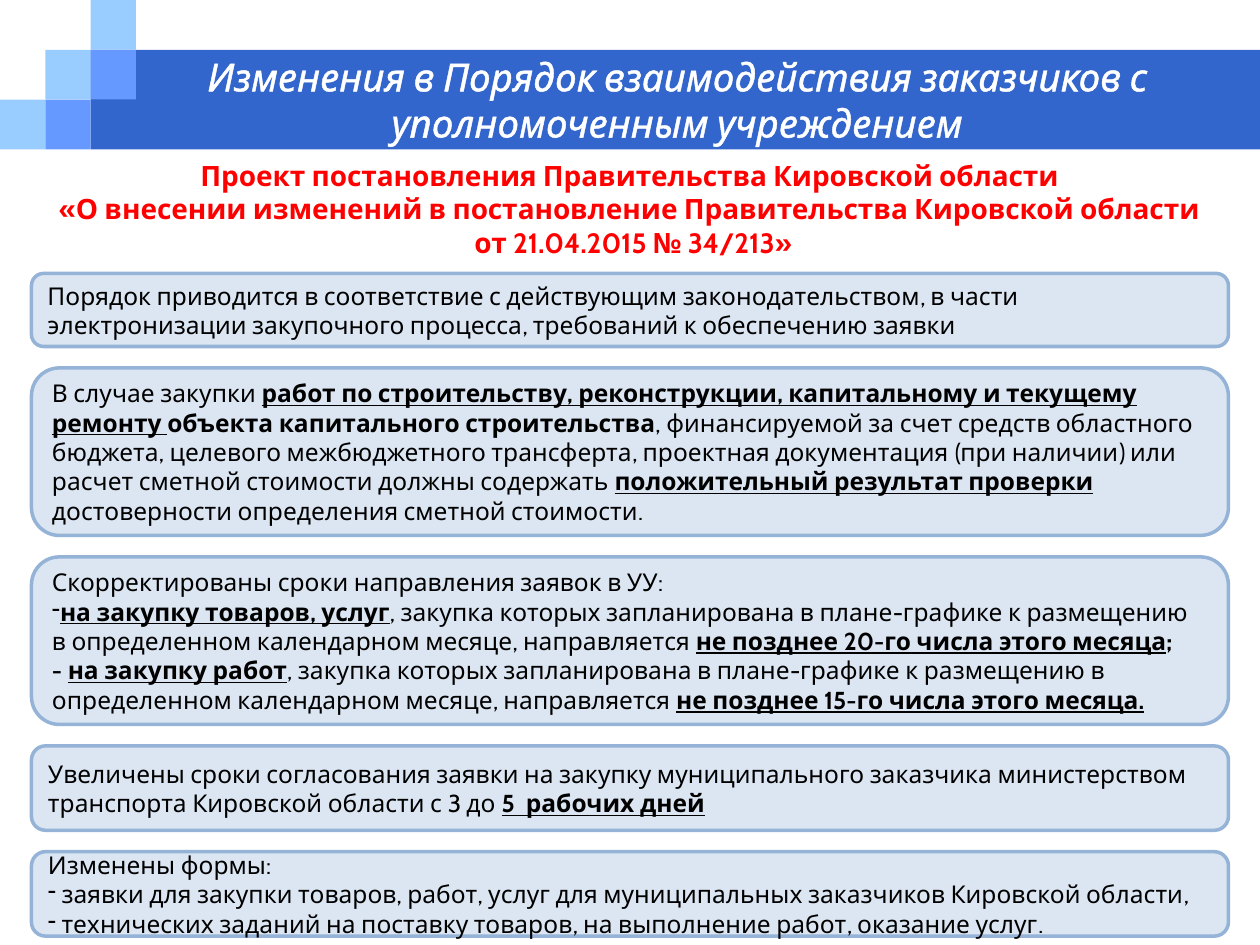
from typing import NamedTuple

from lxml import etree
from pptx import Presentation
from pptx import util as u
from pptx.dml import color
from pptx.enum import shapes, text
from pptx.oxml import ns

FONT = "Cabin"
CELL_W, CELL_H = 0.36, 0.395


class Run(NamedTuple):
    text: str
    bold: bool = False
    underline: bool = False


class Para(NamedTuple):
    runs: list[Run]
    dash: bool = False


class Panel(NamedTuple):
    height: float
    paras: list[Para]


class Block(NamedTuple):
    col: int
    row: int
    cols: float
    rows: int
    fill: str


def rgb(value: str) -> color.RGBColor:
    return color.RGBColor.from_string(value)


def key(value: str) -> Run:
    """Bold, underlined wording."""
    return Run(value, True, True)


def add_box(s, kind, left: float, top: float, width: float, height: float, fill: str):
    sp = s.shapes.add_shape(kind, *map(u.Inches, (left, top, width, height)))
    sp.shadow.inherit = False
    sp.fill.solid()
    sp.fill.fore_color.rgb = rgb(fill)
    sp.line.fill.background()
    return sp


def write(tf, paras: list[Para], align, hex_color: str, fmt: dict) -> None:
    tf.word_wrap = True
    for i, para in enumerate(paras):
        p = tf.paragraphs[0] if i == 0 else tf.add_paragraph()
        p.alignment = align
        if para.dash:
            etree.SubElement(p._p.get_or_add_pPr(), ns.qn("a:buChar"), char="-")
        for part in para.runs:
            r = p.add_run()
            r.text = part.text
            styles = {"name": FONT, "bold": part.bold, "underline": part.underline}
            for name, value in (styles | fmt).items():
                setattr(r.font, name, value)
            r.font.color.rgb = rgb(hex_color)


def add_heading(s, left: float, top: float, width: float, height: float,
                anchor, paras: list[Para], hex_color: str, fmt: dict):
    sp = s.shapes.add_textbox(*map(u.Inches, (left, top, width, height)))
    tf = sp.text_frame
    for side in ("left", "top", "right", "bottom"):
        setattr(tf, f"margin_{side}", 0)
    tf.vertical_anchor = anchor
    write(tf, paras, text.PP_ALIGN.CENTER, hex_color, fmt)
    return sp


def outline_text(sp, hex_color: str, width: float) -> None:
    for r in sp.text_frame.paragraphs[0].runs:
        ln = etree.Element(ns.qn("a:ln"), w=str(u.Pt(width)))
        fill = etree.SubElement(ln, ns.qn("a:solidFill"))
        etree.SubElement(fill, ns.qn("a:srgbClr"), val=hex_color)
        r.font._element.insert(0, ln)


def add_panel(s, panel: Panel, top: float) -> None:
    sp = add_box(s, shapes.MSO_SHAPE.ROUNDED_RECTANGLE, 0.25, top, 9.5, panel.height, "DCE6F2")
    sp.line.color.rgb = rgb("95B3D7")
    sp.line.width = u.Pt(2)
    sp.text_frame.vertical_anchor = text.MSO_ANCHOR.MIDDLE
    write(sp.text_frame, panel.paras, text.PP_ALIGN.LEFT, "000000", {"size": u.Pt(14)})


# Banner and corner squares, in grid cells
BLOCKS = [
    Block(2, 1, 9.28 / CELL_W, 2, "3366CC"),
    Block(0, 2, 1, 1, "99CCFF"),
    Block(1, 1, 1, 1, "99CCFF"),
    Block(2, 0, 1, 1, "99CCFF"),
    Block(2, 1, 1, 1, "6699FF"),
    Block(1, 2, 1, 1, "6699FF"),
]

TITLE = [Para([Run("Изменения в Порядок взаимодействия заказчиков с уполномоченным учреждением")])]
SUBTITLE = [Para([Run(line)]) for line in (
    "Проект постановления Правительства Кировской области",
    "«О внесении изменений в постановление Правительства Кировской области",
    " от 21.04.2015 № 34/213»",
)]

PLANNED = Run(", закупка которых запланирована в плане-графике к размещению в "
              "определенном календарном месяце, направляется ")

PANELS = [
    Panel(0.58, [Para([Run(
        "Порядок приводится в соответствие с действующим законодательством, в части "
        "электронизации закупочного процесса, требований к обеспечению заявки")])]),
    Panel(1.33, [Para([
        Run("В случае закупки "),
        key("работ по строительству, реконструкции, капитальному и текущему ремонту "),
        Run("объекта капитального строительства", True),
        Run(", финансируемой за счет средств областного бюджета, целевого межбюджетного "
            "трансферта, проектная документация (при наличии) или расчет сметной "
            "стоимости должны содержать "),
        key("положительный результат проверки "),
        Run("достоверности определения сметной стоимости."),
    ])]),
    Panel(1.33, [
        Para([Run("Скорректированы сроки направления заявок в УУ:")]),
        Para([key("на закупку товаров, услуг"), PLANNED,
              key("не позднее 20-го числа этого месяца"), Run(";", True)], dash=True),
        Para([Run("- ", True), key("на закупку работ"), PLANNED,
              key("не позднее 15-го числа этого месяца.")]),
    ]),
    Panel(0.67, [Para([
        Run("Увеличены сроки согласования заявки на закупку муниципального заказчика "
            "министерством транспорта Кировской области с 3 до "),
        key("5  рабочих дней"),
    ])]),
    Panel(0.67, [
        Para([Run("Изменены формы:")]),
        Para([Run(" заявки для закупки товаров, работ, услуг для муниципальных "
                  "заказчиков Кировской области,")], dash=True),
        Para([Run(" технических заданий на поставку товаров, на выполнение работ, "
                  "оказание услуг.")], dash=True),
    ]),
]


def main() -> None:
    prs = Presentation()
    prs.slide_width, prs.slide_height = u.Inches(10), u.Inches(7.5)
    s = prs.slides.add_slide(prs.slide_layouts[6])

    for b in BLOCKS:
        add_box(s, shapes.MSO_SHAPE.RECTANGLE, b.col * CELL_W, b.row * CELL_H,
                b.cols * CELL_W, b.rows * CELL_H, b.fill)

    # Headings
    title = add_heading(s, 0.75, 0.42, 9.25, 0.83, text.MSO_ANCHOR.TOP, TITLE,
                        "FFFFFF", {"size": u.Pt(22), "italic": True})
    outline_text(title, "FFFFFF", 1.45)
    add_heading(s, 0, 1.25, 10, 0.81, text.MSO_ANCHOR.MIDDLE, SUBTITLE,
                "FF0000", {"size": u.Pt(16), "bold": True})

    # Stack of panels with equal gaps
    top, gap = 2.17, 0.17
    for panel in PANELS:
        add_panel(s, panel, top)
        top += panel.height + gap

    prs.save("out.pptx")


if __name__ == "__main__":
    main()
